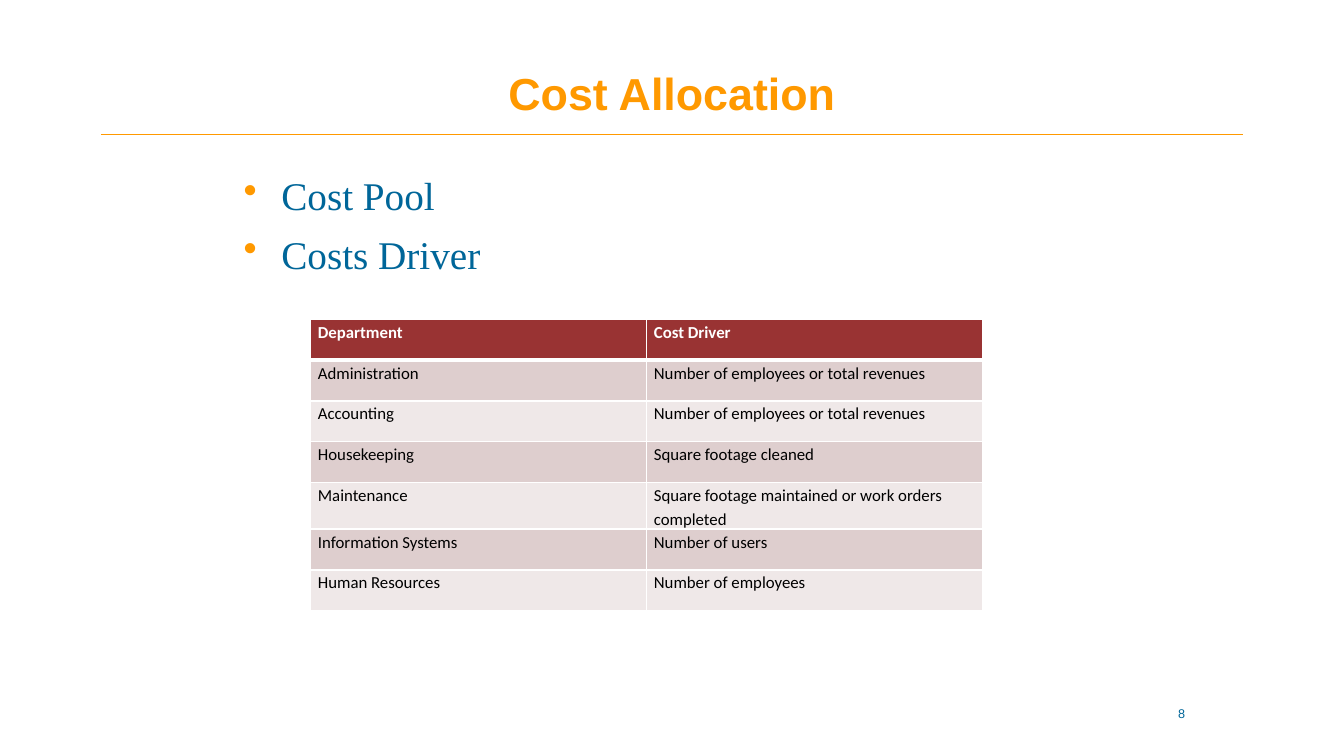
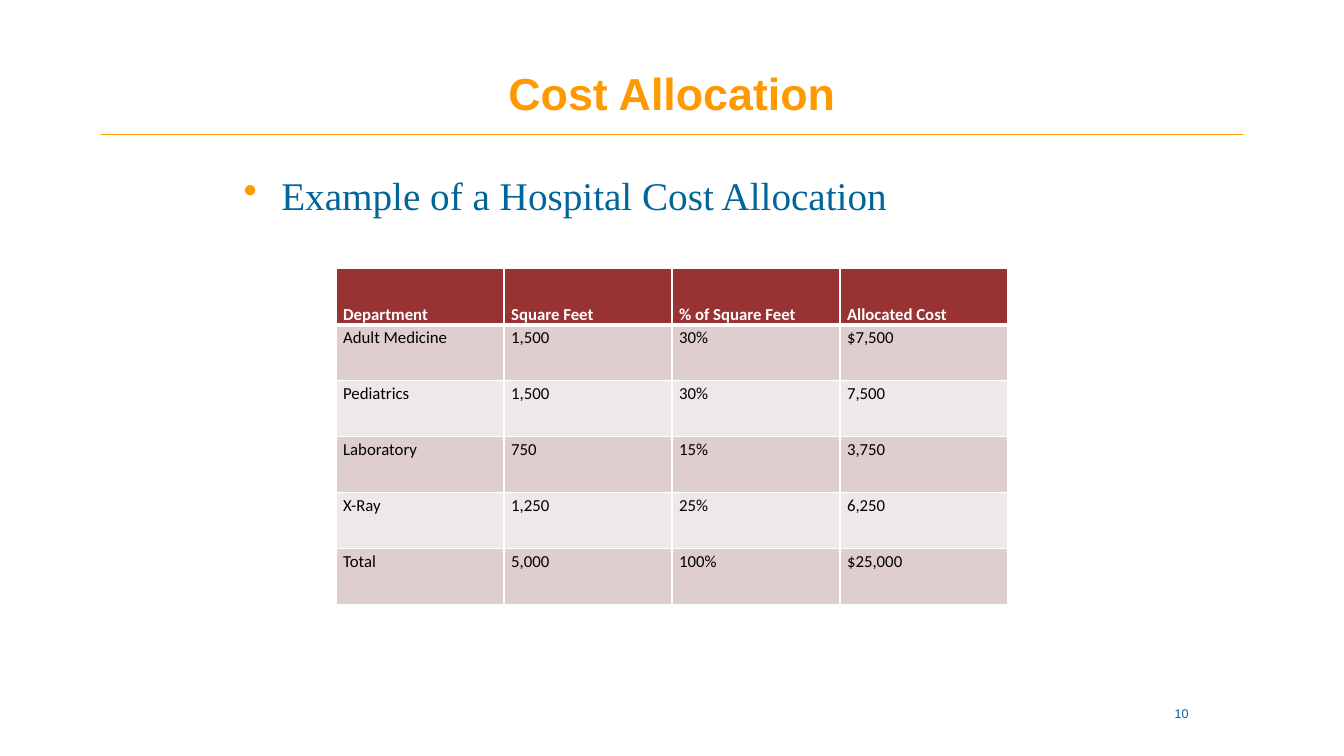
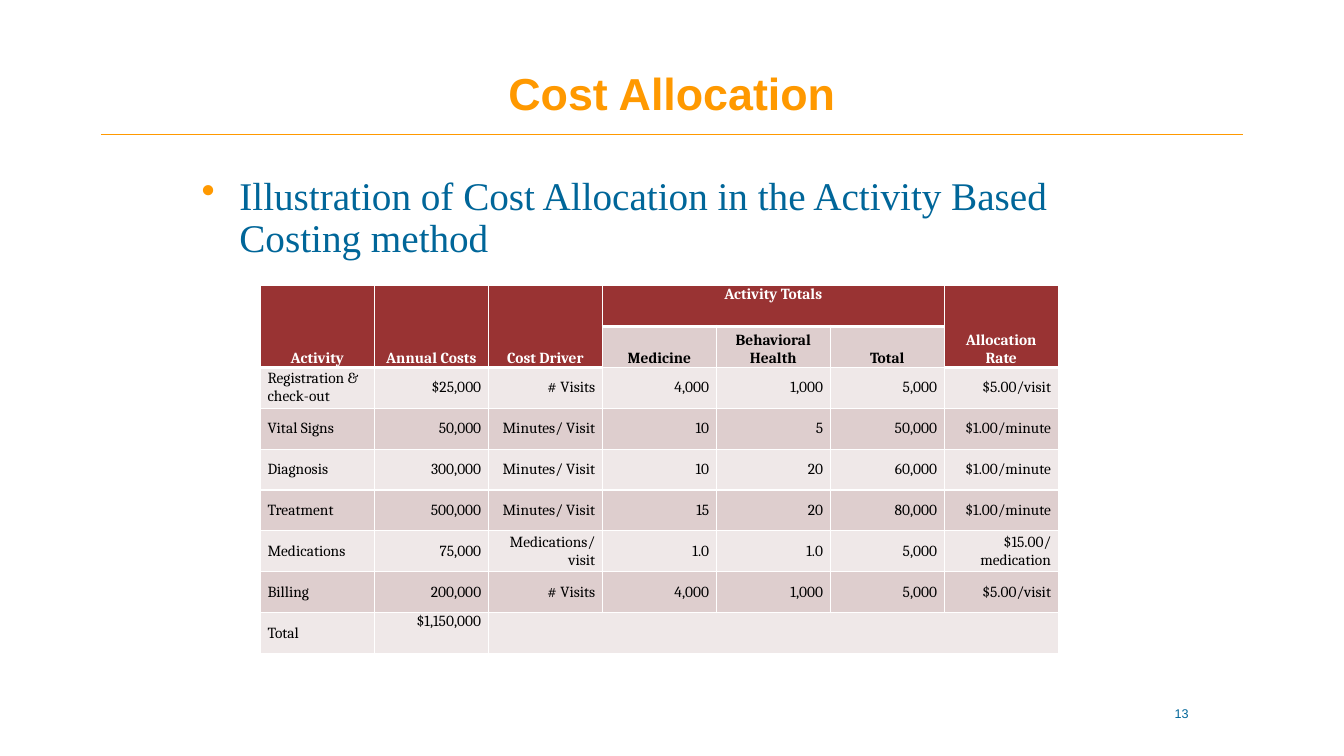
"""Build three slides on cost allocation."""
import pptx
import pptx.dml.color
import pptx.enum.shapes
import pptx.enum.text
import pptx.oxml.ns
import pptx.util
from lxml import etree

RGBColor = pptx.dml.color.RGBColor
Anchor = pptx.enum.text.MSO_ANCHOR
Align = pptx.enum.text.PP_ALIGN
Pt = pptx.util.Pt
qn = pptx.oxml.ns.qn

ORANGE = RGBColor(0xFF, 0x99, 0x00)
BLUE = RGBColor(0x00, 0x66, 0x99)
RED = RGBColor(0x99, 0x33, 0x33)
DARK_BAND = RGBColor(0xDE, 0xCE, 0xCE)
LIGHT_BAND = RGBColor(0xEF, 0xE8, 0xE8)
WHITE = RGBColor(0xFF, 0xFF, 0xFF)
BLACK = RGBColor(0x00, 0x00, 0x00)

COLUMNS, ROWS = 160, 90


class Deck:
    """Hold the shared style and the current slide on a 160 by 90 grid."""

    def __init__(self):
        self.presentation = pptx.Presentation()
        self.presentation.slide_width = self.grid(COLUMNS)
        self.presentation.slide_height = self.grid(ROWS)
        self.slide = None

    def grid(self, *units):
        """Turn grid units into lengths."""
        lengths = [pptx.util.Inches(unit / 12) for unit in units]
        return lengths if len(lengths) > 1 else lengths[0]

    def style(self, paragraph, name, size, color, bold=False, align=Align.LEFT, spacing=None):
        """Set the look of one paragraph."""
        paragraph.alignment = align
        if spacing:
            paragraph.line_spacing = spacing
        paragraph.font.name = name
        paragraph.font.size = Pt(size)
        paragraph.font.bold = bold
        paragraph.font.color.rgb = color

    def text_box(self, left, top, width, height):
        """Add a wrapping text frame."""
        shape = self.slide.shapes.add_textbox(*self.grid(left, top, width, height))
        shape.text_frame.word_wrap = True
        return shape.text_frame

    def start(self, title, number):
        """Add a slide with its rule, title and number."""
        self.slide = self.presentation.slides.add_slide(self.presentation.slide_layouts[6])
        rule = self.slide.shapes.add_connector(
            pptx.enum.shapes.MSO_CONNECTOR.STRAIGHT, *self.grid(12, 16, 148, 16))
        rule.line.color.rgb = ORANGE
        rule.line.width = Pt(1)
        etree.SubElement(rule._element.spPr, qn("a:effectLst"))

        frame = self.text_box(12, 0, 136, 16)
        frame.margin_left = frame.margin_right = frame.margin_top = 0
        frame.margin_bottom = self.grid(1.8)
        frame.vertical_anchor = Anchor.BOTTOM
        frame.text = title
        self.style(frame.paragraphs[0], "Arial", 32, ORANGE, True, Align.CENTER, Pt(36))

        frame = self.text_box(124, 83.5, 33.33, 4.8)
        frame.text = str(number)
        self.style(frame.paragraphs[0], "Arial", 9, BLUE, align=Align.CENTER)

    def bullets(self, items, left, width, height):
        """Add the bulleted body text."""
        frame = self.text_box(left, 21, width, height)
        frame.margin_left = frame.margin_right = frame.margin_top = frame.margin_bottom = 0
        frame.text = "\n".join(items)
        for index, paragraph in enumerate(frame.paragraphs):
            if index:
                paragraph.space_before = Pt(12)
            properties = paragraph._p.get_or_add_pPr()
            indent = self.grid(4.5)
            properties.set("marL", str(indent))
            properties.set("indent", str(-indent))
            color = etree.SubElement(properties, qn("a:buClr"))
            etree.SubElement(color, qn("a:srgbClr"), val=str(ORANGE))
            etree.SubElement(properties, qn("a:buChar"), char="•")
            self.style(paragraph, "Times New Roman", 28, BLUE, spacing=Pt(30))

    def borders(self, cell, row):
        """Draw white cell borders, thick below the first row."""
        widths = {"L": 1, "R": 1, "T": 3 if row == 1 else 1, "B": 3 if row == 0 else 1}
        properties = cell._tc.get_or_add_tcPr()
        for side, width in widths.items():
            line = etree.SubElement(properties, qn(f"a:ln{side}"), w=str(Pt(width)))
            fill = etree.SubElement(line, qn("a:solidFill"))
            etree.SubElement(fill, qn("a:srgbClr"), val=str(WHITE))

    def table(self, rows, left, top, width, row_height, font="Calibri", size=12, spacing=1.15,
              header_rows=1, header_anchor=Anchor.TOP, header_align=Align.LEFT,
              body_anchor=Anchor.TOP, value_align=Align.LEFT, merges=()):
        """Add a banded table with equal rows and columns."""
        count = len(rows[0])
        table = self.slide.shapes.add_table(
            len(rows), count, *self.grid(left, top, width, row_height * len(rows))).table
        table.first_row = table.horz_banding = False
        for row, texts in enumerate(rows):
            for column, text in enumerate(texts):
                header = row < header_rows
                cell = table.cell(row, column)
                cell.margin_left = cell.margin_right = self.grid(0.85)
                cell.margin_top = cell.margin_bottom = 0
                cell.vertical_anchor = header_anchor if header else body_anchor
                self.borders(cell, row)
                cell.fill.solid()
                cell.fill.fore_color.rgb = (LIGHT_BAND, DARK_BAND)[row % 2] if row else RED
                cell.text = text
                align = header_align if header else value_align if column else Align.LEFT
                self.style(cell.text_frame.paragraphs[0], font, size,
                           BLACK if row else WHITE, header, align, spacing)
        for first, last in merges:
            table.cell(*first).merge(table.cell(*last))
        return table


def main():
    """Build and save the slides."""
    deck = Deck()

    deck.start("Cost Allocation", 8)
    deck.bullets(["Cost Pool", "Costs Driver"], 29, 102, 17)
    deck.table([
        ("Department", "Cost Driver"),
        ("Administration", "Number of employees or total revenues"),
        ("Accounting", "Number of employees or total revenues"),
        ("Housekeeping", "Square footage cleaned"),
        ("Maintenance", "Square footage maintained or work orders completed"),
        ("Information Systems", "Number of users"),
        ("Human Resources", "Number of employees"),
    ], 37, 38, 80, 4.87)

    deck.start("Cost Allocation", 10)
    deck.bullets(["Example of a Hospital Cost Allocation"], 29, 102, 10)
    deck.table([
        ("Department", "Square Feet", "% of Square Feet", "Allocated Cost"),
        ("Adult Medicine", "1,500", "30%", "$7,500"),
        ("Pediatrics", "1,500", "30%", "7,500"),
        ("Laboratory", "750", "15%", "3,750"),
        ("X-Ray", "1,250", "25%", "6,250"),
        ("Total", "5,000", "100%", "$25,000"),
    ], 40, 32, 80, 6.67, header_anchor=Anchor.BOTTOM)

    deck.start("Cost Allocation", 13)
    deck.bullets(["Illustration of Cost Allocation in the Activity Based Costing method"],
                 24, 112, 11)
    activities = deck.table([
        ("Activity", "Annual Costs", "Cost Driver", "Activity Totals", "", "", "Allocation Rate"),
        ("", "", "", "Medicine", "Behavioral Health", "Total", ""),
        ("Registration & check-out", "$25,000", "# Visits", "4,000", "1,000", "5,000",
         "$5.00/visit"),
        ("Vital Signs", "50,000", "Minutes/ Visit", "10", "5", "50,000", "$1.00/minute"),
        ("Diagnosis", "300,000", "Minutes/ Visit", "10", "20", "60,000", "$1.00/minute"),
        ("Treatment", "500,000", "Minutes/ Visit", "15", "20", "80,000", "$1.00/minute"),
        ("Medications", "75,000", "Medications/ visit", "1.0", "1.0", "5,000",
         "$15.00/ medication"),
        ("Billing", "200,000", "# Visits", "4,000", "1,000", "5,000", "$5.00/visit"),
        ("Total", "$1,150,000", "", "", "", "", ""),
    ], 31, 34, 95, 4.87, font="Cambria", size=11, spacing=None, header_rows=2,
        header_anchor=Anchor.BOTTOM, header_align=Align.CENTER,
        body_anchor=Anchor.MIDDLE, value_align=Align.RIGHT,
        merges=[*(((0, column), (1, column)) for column in (0, 1, 2, 6)),
                ((0, 3), (0, 5)), ((8, 2), (8, 6))])
    for row, column in ((0, 3), (8, 1)):
        activities.cell(row, column).vertical_anchor = Anchor.TOP

    deck.presentation.save("out.pptx")


if __name__ == "__main__":
    main()
